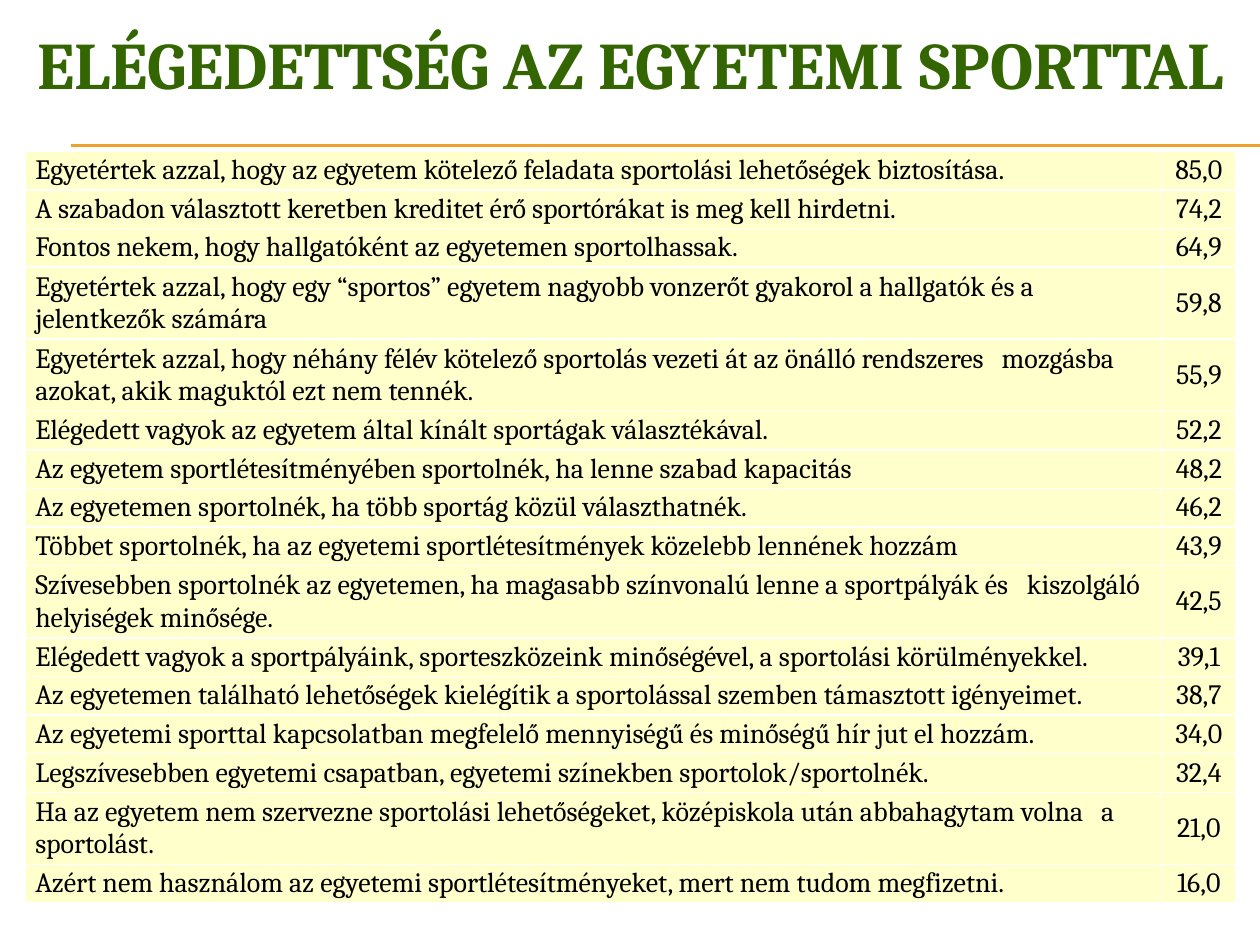
from lxml import etree
from pptx import Presentation
from pptx.dml.color import RGBColor
from pptx.enum.shapes import MSO_CONNECTOR
from pptx.enum.text import MSO_ANCHOR, PP_ALIGN
from pptx.oxml.ns import qn
from pptx.util import Inches, Pt

GREEN = RGBColor(0x33, 0x66, 0x00)
GOLD = RGBColor(0xF0, 0xA2, 0x2E)
CREAM = RGBColor(0xFF, 0xFF, 0xCC)
WHITE = RGBColor(0xFF, 0xFF, 0xFF)
BLACK = RGBColor(0, 0, 0)

TITLE = "ELÉGEDETTSÉG AZ EGYETEMI SPORTTAL"
# Statement, percentage of agreement, lines of text
ANSWERS = [
    ("Egyetértek azzal, hogy az egyetem kötelező feladata sportolási lehetőségek biztosítása.", "85,0", 1),
    ("A szabadon választott keretben kreditet érő sportórákat is meg kell hirdetni.", "74,2", 1),
    ("Fontos nekem, hogy hallgatóként az egyetemen sportolhassak.", "64,9", 1),
    ("Egyetértek azzal, hogy egy “sportos” egyetem nagyobb vonzerőt gyakorol a hallgatók és a "
     "jelentkezők számára", "59,8", 2),
    ("Egyetértek azzal, hogy néhány félév kötelező sportolás vezeti át az önálló rendszeres "
     "\tmozgásba azokat, akik maguktól ezt nem tennék.", "55,9", 2),
    ("Elégedett vagyok az egyetem által kínált sportágak választékával.", "52,2", 1),
    ("Az egyetem sportlétesítményében sportolnék, ha lenne szabad kapacitás", "48,2", 1),
    ("Az egyetemen sportolnék, ha több sportág közül választhatnék.", "46,2", 1),
    ("Többet sportolnék, ha az egyetemi sportlétesítmények közelebb lennének hozzám", "43,9", 1),
    ("Szívesebben sportolnék az egyetemen, ha magasabb színvonalú lenne a sportpályák és "
     "\tkiszolgáló helyiségek minősége.", "42,5", 2),
    ("Elégedett vagyok a sportpályáink, sporteszközeink minőségével, a sportolási körülményekkel.", "39,1", 1),
    ("Az egyetemen található lehetőségek kielégítik a sportolással szemben támasztott igényeimet.", "38,7", 1),
    ("Az egyetemi sporttal kapcsolatban megfelelő mennyiségű és minőségű hír jut el hozzám.", "34,0", 1),
    ("Legszívesebben egyetemi csapatban, egyetemi színekben sportolok/sportolnék.", "32,4", 1),
    ("Ha az egyetem nem szervezne sportolási lehetőségeket, középiskola után abbahagytam volna "
     "\ta sportolást.", "21,0", 2),
    ("Azért nem használom az egyetemi sportlétesítményeket, mert nem tudom megfizetni.", "16,0", 1),
]
TAB_STOPS = (7.67, 7.87, 8.46)


class SlideBuilder:
    """Holds the style and the slide; lengths are shares of the slide's size."""
    font = "Cambria"
    title_size = Pt(38)
    body_size = Pt(16)
    row_height = {1: 0.29, 2: 0.54}

    def __init__(self, prs):
        self.w, self.h = prs.slide_width, prs.slide_height
        self.s = prs.slides.add_slide(prs.slide_layouts[6])

    def x(self, share):
        return round(self.w * share)

    def y(self, share):
        return round(self.h * share)

    def style(self, p, size, color, bold=False):
        p.font.name, p.font.size, p.font.bold = self.font, size, bold
        p.font.color.rgb = color

    def rule(self, left, top):
        line = self.s.shapes.add_connector(
            MSO_CONNECTOR.STRAIGHT, self.x(left), top, self.w, top)
        line.line.color.rgb, line.line.width = GOLD, Pt(0.75)
        etree.SubElement(line._element.spPr, qn("a:effectLst"))

    def title(self, text, left, width, height):
        sp = self.s.shapes.add_textbox(self.x(left), 0, self.x(width), self.y(height))
        tf = sp.text_frame
        tf.word_wrap, tf.vertical_anchor = True, MSO_ANCHOR.MIDDLE
        tf.text = text
        self.style(tf.paragraphs[0], self.title_size, GREEN, True)

    def borders(self, cell):
        tcPr = cell._tc.get_or_add_tcPr()
        for i, side in enumerate(("lnL", "lnR", "lnT", "lnB")):
            ln = etree.Element(qn(f"a:{side}"), w=str(Pt(1)))
            fill = etree.SubElement(ln, qn("a:solidFill"))
            etree.SubElement(fill, qn("a:srgbClr"), val=str(WHITE))
            tcPr.insert(i, ln)

    def cell(self, cell, text, align, margin_left):
        cell.text = text
        cell.vertical_anchor = MSO_ANCHOR.MIDDLE
        cell.margin_left, cell.margin_right = Inches(margin_left), Inches(0.01)
        cell.margin_top = cell.margin_bottom = Inches(0.02)
        cell.fill.solid()
        cell.fill.fore_color.rgb = CREAM
        self.borders(cell)
        p = cell.text_frame.paragraphs[0]
        p.alignment = align
        self.style(p, self.body_size, BLACK)
        if "\t" in text:
            tabs = etree.Element(qn("a:tabLst"))
            for stop in TAB_STOPS:
                etree.SubElement(tabs, qn("a:tab"), pos=str(Inches(stop)), algn="l")
            p._p.get_or_add_pPr().find(qn("a:defRPr")).addprevious(tabs)

    def table(self, rows, left, top, widths):
        heights = [Inches(self.row_height[lines]) for *_, lines in rows]
        table = self.s.shapes.add_table(
            len(rows), len(widths), self.x(left), self.y(top),
            self.x(sum(widths)), sum(heights)).table
        table.first_row = table.horz_banding = False
        for column, width in zip(table.columns, widths):
            column.width = self.x(width)
        for i, (statement, percent, _) in enumerate(rows):
            table.rows[i].height = heights[i]
            self.cell(table.cell(i, 0), statement, PP_ALIGN.LEFT, 0.08)
            self.cell(table.cell(i, 1), percent, PP_ALIGN.CENTER, 0.01)


def main():
    prs = Presentation()
    prs.slide_width, prs.slide_height = Inches(10), Inches(7.5)
    b = SlideBuilder(prs)
    # Double rule under the title
    for top in (1.15, 1.16):
        b.rule(0.056, Inches(top))
    # Title
    b.title(TITLE, 0.02, 0.98, 1 / 7.5)
    # Statements and percentages
    b.table(ANSWERS, 0.02, 0.16, (0.902, 0.059))
    prs.save("out.pptx")


if __name__ == "__main__":
    main()
